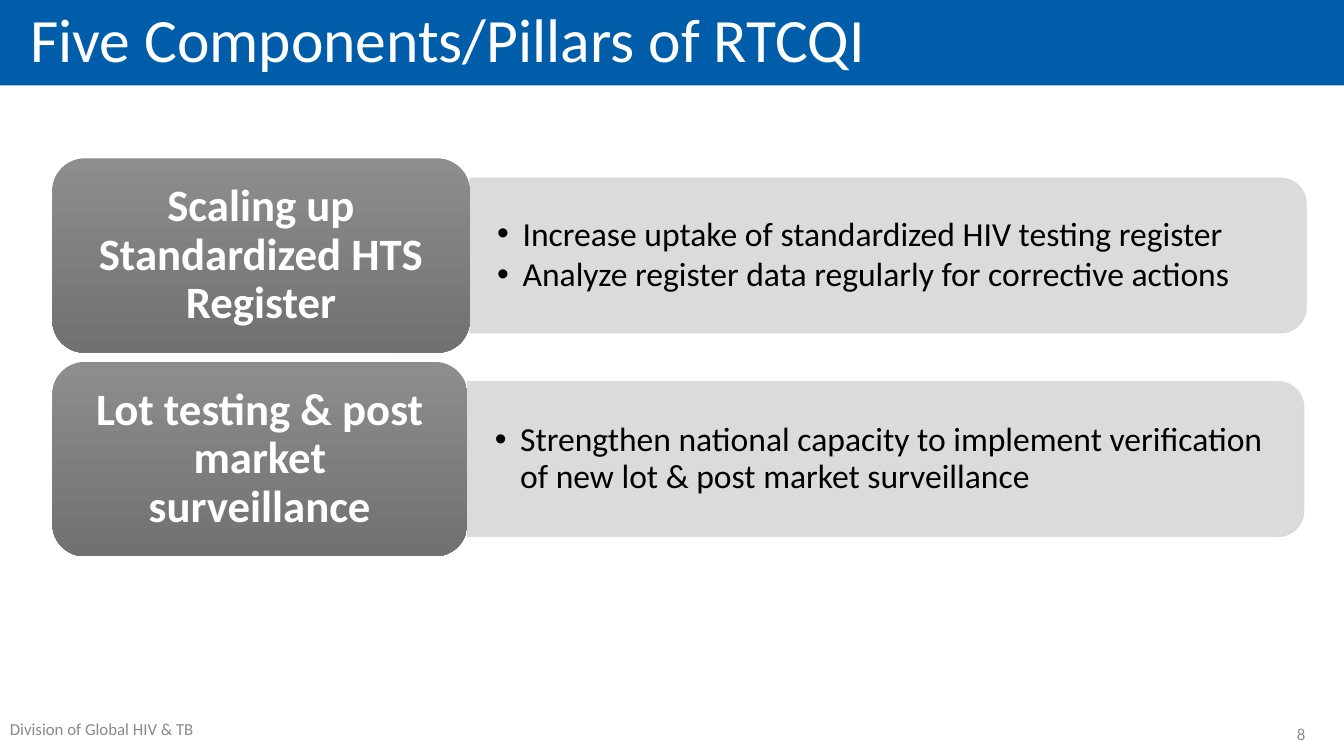
from lxml.etree import SubElement
from pptx import Presentation
from pptx.dml.color import RGBColor
from pptx.enum.shapes import MSO_SHAPE
from pptx.enum.text import MSO_ANCHOR, MSO_AUTO_SIZE, PP_ALIGN
from pptx.oxml.ns import qn
from pptx.util import Cm, Pt

BLUE = RGBColor(0x00, 0x5D, 0xAA)
WHITE = RGBColor(0xFF, 0xFF, 0xFF)
BLACK = RGBColor(0x00, 0x00, 0x00)
PANEL_GRAY = RGBColor(0xD8, 0xD8, 0xD8)
CARD_TOP_GRAY = RGBColor(0x8D, 0x8D, 0x8D)
CARD_BOTTOM_GRAY = RGBColor(0x71, 0x71, 0x71)
FOOTER_GRAY = RGBColor(0x89, 0x89, 0x89)
NUMBER_GRAY = RGBColor(0x8C, 0x8C, 0x8C)

CARD_LEFT, CARD_HEIGHT = Cm(1.32), Cm(4.9)
PANEL_WIDTH, PANEL_HEIGHT = Cm(21.08), Cm(3.91)
LIST_WIDTH, LIST_HEIGHT = Cm(20.88), Cm(3.53)

PILLARS = [
    ("Scaling up Standardized HTS Register", Cm(3.99), Cm(10.52),
     ["Increase uptake of standardized HIV testing register",
      "Analyze register data regularly for corrective actions"]),
    ("Lot testing & post market surveillance", Cm(9.12), Cm(10.46),
     ["Strengthen national capacity to implement verification of new lot & post market surveillance"]),
]


def apply(target, values):
    for name, value in values.items():
        setattr(target, name, value)


class PillarSlide:
    font_name = "Calibri"

    def __init__(self, presentation):
        self.slide = presentation.slides.add_slide(presentation.slide_layouts[3])
        self.shapes = self.slide.shapes

    def place(self, shape, left, top, width, height):
        apply(shape, {"left": left, "top": top, "width": width, "height": height})

    def set_text(self, shape, lines, size, color, margins, anchor=MSO_ANCHOR.MIDDLE,
                 alignment=PP_ALIGN.LEFT, bold=False, spacing=0.9, after=0):
        horizontal, vertical = margins
        frame = shape.text_frame
        frame.text = "\n".join(lines)
        apply(frame, {"word_wrap": True, "auto_size": MSO_AUTO_SIZE.NONE,
                      "vertical_anchor": anchor,
                      "margin_left": horizontal, "margin_right": horizontal,
                      "margin_top": vertical, "margin_bottom": vertical})
        for paragraph in frame.paragraphs:
            apply(paragraph, {"alignment": alignment, "line_spacing": spacing,
                              "space_before": Pt(0), "space_after": Pt(after)})
            apply(paragraph.runs[0].font, {"name": self.font_name, "size": Pt(size), "bold": bold})
            paragraph.runs[0].font.color.rgb = color

    def title(self, text):
        shape = self.shapes.title
        self.place(shape, Cm(0), Cm(-0.03), Cm(33.87), Cm(2.18))
        shape.fill.solid()
        shape.fill.fore_color.rgb = BLUE
        self.set_text(shape, [text], 44, WHITE, (Cm(0.76), Cm(0.13)))

    def label(self, text, left, width, color, **style):
        shape = self.shapes.add_textbox(left, Cm(17.98), width, Cm(1.02))
        self.set_text(shape, [text], 12, color, (Cm(0.25), Cm(0.13)), spacing=1.0, **style)

    def panel(self, left, middle):
        shape = self.shapes.add_shape(
            MSO_SHAPE.ROUND_2_SAME_RECTANGLE,
            left + (PANEL_WIDTH - PANEL_HEIGHT) // 2, middle - PANEL_WIDTH // 2,
            PANEL_HEIGHT, PANEL_WIDTH)
        apply(shape, {"rotation": 90})
        shape.shadow.inherit = False
        shape.line.width = Pt(0.5)
        for fill in (shape.fill, shape.line.fill):
            fill.solid()
            fill.fore_color.rgb = PANEL_GRAY
        for color in shape.element.spPr.iter(qn("a:srgbClr")):
            SubElement(color, qn("a:alpha"), val="90000")
        return shape

    def bullets(self, shape, lines, left, middle):
        self.place(shape, left, middle - LIST_HEIGHT // 2, LIST_WIDTH, LIST_HEIGHT)
        self.set_text(shape, lines, 24, BLACK, (Cm(0.69), Cm(0.36)), after=3)
        for paragraph in shape.text_frame.paragraphs:
            properties = paragraph._p.get_or_add_pPr()
            properties.set("marL", str(Cm(0.64)))
            properties.set("indent", str(-Cm(0.64)))
            SubElement(properties, qn("a:buChar"), char="•")

    def card(self, text, top, width):
        shape = self.shapes.add_shape(MSO_SHAPE.ROUNDED_RECTANGLE, CARD_LEFT, top, width, CARD_HEIGHT)
        shape.shadow.inherit = False
        shape.line.fill.background()
        shape.fill.gradient()
        shape.fill.gradient_angle = 270
        for stop, color, position in zip(shape.fill.gradient_stops,
                                         (CARD_TOP_GRAY, CARD_BOTTOM_GRAY), (0, 1)):
            stop.color.rgb = color
            stop.position = position
        self.set_text(shape, [text], 32, WHITE, (Cm(0.56), Cm(0.43)),
                      alignment=PP_ALIGN.CENTER, bold=True)

    def pillar(self, placeholder, name, top, width, lines):
        left, middle = CARD_LEFT + width, top + CARD_HEIGHT // 2
        panel = self.panel(left, middle)
        self.bullets(placeholder, lines, left, middle)
        panel.element.addnext(placeholder.element)
        self.card(name, top, width)


def main():
    presentation = Presentation()
    apply(presentation, {"slide_width": Cm(33.87), "slide_height": Cm(19.05)})
    page = PillarSlide(presentation)
    page.title("Five Components/Pillars of RTCQI")
    page.label("Division of Global HIV & TB", Cm(0), Cm(5.51), FOOTER_GRAY, anchor=MSO_ANCHOR.TOP)
    page.label("8", Cm(30.23), Cm(2.92), NUMBER_GRAY, alignment=PP_ALIGN.RIGHT)
    placeholders = list(page.slide.placeholders)[1:]
    for placeholder, pillar in zip(placeholders, PILLARS):
        page.pillar(placeholder, *pillar)
    presentation.save("out.pptx")


if __name__ == "__main__":
    main()
